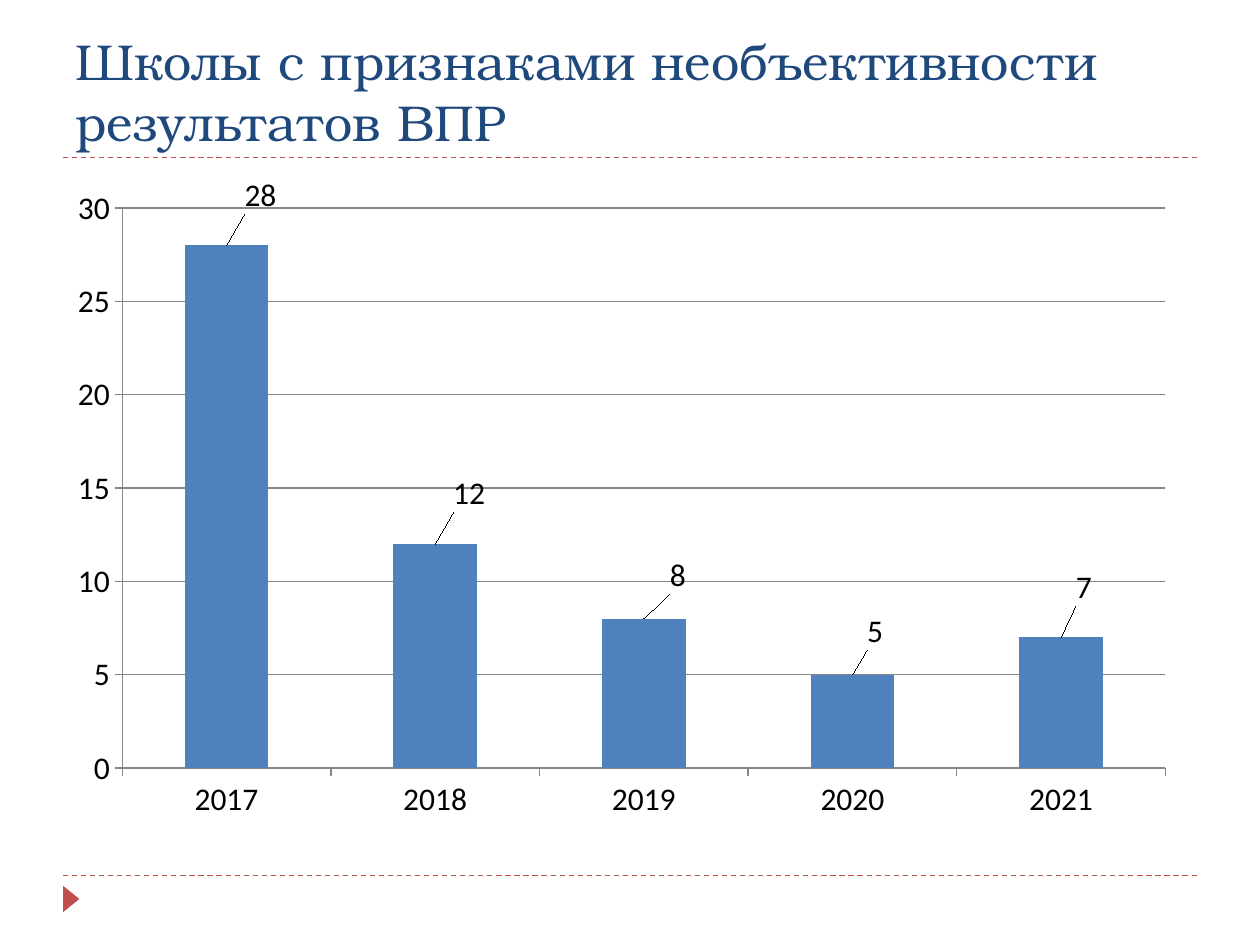
from dataclasses import dataclass

from lxml.etree import SubElement
from pptx import Presentation
from pptx.chart.data import CategoryChartData
from pptx.dml.color import RGBColor
from pptx.enum.chart import XL_CHART_TYPE, XL_LABEL_POSITION, XL_TICK_MARK
from pptx.enum.dml import MSO_LINE
from pptx.enum.shapes import MSO_CONNECTOR, MSO_SHAPE
from pptx.enum.text import MSO_ANCHOR, PP_ALIGN
from pptx.oxml.ns import qn
from pptx.util import Inches, Pt


@dataclass(frozen=True)
class Theme:
    title_color: RGBColor = RGBColor(0x1F, 0x49, 0x7D)
    accent: RGBColor = RGBColor(0xC0, 0x50, 0x4D)
    bar: RGBColor = RGBColor(0x4F, 0x81, 0xBD)
    grid: RGBColor = RGBColor(0x87, 0x87, 0x87)
    text: RGBColor = RGBColor(0, 0, 0)
    title_font: str = "TeX Gyre Bonum"
    chart_font: str = "Calibri"
    title_size: float = 28.8
    chart_size: float = 18
    line_width: float = 0.75


@dataclass(frozen=True)
class YearCount:
    year: str
    schools: int
    label_x: float
    label_y: float


THEME = Theme()
COUNTS = [
    YearCount("2017", 28, 0.03, -0.04),
    YearCount("2018", 12, 0.03, -0.04),
    YearCount("2019", 8, 0.03, -0.03),
    YearCount("2020", 5, 0.02, -0.03),
    YearCount("2021", 7, 0.02, -0.04),
]


def add_rule(page, top: float) -> None:
    rule = page.shapes.add_connector(
        MSO_CONNECTOR.STRAIGHT, Inches(0.5), Inches(top), Inches(9.5), Inches(top)
    )
    rule.line.color.rgb = THEME.accent
    rule.line.width = Pt(THEME.line_width)
    rule.line.dash_style = MSO_LINE.DASH
    SubElement(rule._element.spPr, qn("a:effectLst"))


def add_marker(page) -> None:
    marker = page.shapes.add_shape(
        MSO_SHAPE.ISOSCELES_TRIANGLE, Inches(0.46), Inches(7.07), Inches(0.21), Inches(0.13)
    )
    marker.rotation = 90
    marker.shadow.inherit = False
    marker.fill.solid()
    marker.fill.fore_color.rgb = THEME.accent
    marker.line.fill.background()


def add_title(page, text: str) -> None:
    box = page.shapes.add_textbox(Inches(0.5), Inches(0.25), Inches(9), Inches(1))
    frame = box.text_frame
    frame.word_wrap = True
    frame.vertical_anchor = MSO_ANCHOR.BOTTOM
    frame.text = text
    paragraph = frame.paragraphs[0]
    paragraph.alignment = PP_ALIGN.LEFT
    font = paragraph.runs[0].font
    font.name = THEME.title_font
    font.size = Pt(THEME.title_size)
    font.color.rgb = THEME.title_color


def set_layout(parent, index: int, **settings) -> None:
    for existing in parent.findall(qn("c:layout")):
        parent.remove(existing)
    layout = SubElement(parent, qn("c:layout"))
    parent.insert(index, layout)
    manual = SubElement(layout, qn("c:manualLayout"))
    for name, value in settings.items():
        SubElement(manual, qn(f"c:{name}")).set("val", str(value))


def style_axis(axis) -> None:
    axis.major_tick_mark = XL_TICK_MARK.OUTSIDE
    axis.minor_tick_mark = XL_TICK_MARK.NONE
    axis.format.line.color.rgb = THEME.grid
    axis.format.line.width = Pt(THEME.line_width)


def add_column_chart(page, counts: list[YearCount]) -> None:
    data = CategoryChartData()
    data.categories = [count.year for count in counts]
    data.add_series("Series 1", [count.schools for count in counts])
    chart = page.shapes.add_chart(
        XL_CHART_TYPE.COLUMN_CLUSTERED,
        Inches(0.43), Inches(1.39), Inches(9), Inches(5.23), data,
    ).chart
    chart.has_title = False
    chart.has_legend = False
    chart.font.name = THEME.chart_font
    chart.font.size = Pt(THEME.chart_size)
    chart.font.color.rgb = THEME.text

    style_axis(chart.category_axis)
    values = chart.value_axis
    style_axis(values)
    values.minimum_scale = 0
    values.maximum_scale = 30
    values.major_unit = 5
    values.has_major_gridlines = True
    values.major_gridlines.format.line.color.rgb = THEME.grid
    values.major_gridlines.format.line.width = Pt(THEME.line_width)

    plot = chart.plots[0]
    plot.gap_width = 150
    plot.vary_by_categories = False
    series = plot.series[0]
    series.format.fill.solid()
    series.format.fill.fore_color.rgb = THEME.bar
    series.data_labels.show_value = True
    for index in range(len(counts)):
        series.points[index].data_label.position = XL_LABEL_POSITION.OUTSIDE_END
    for label, count in zip(series._element.iter(qn("c:dLbl")), counts):
        set_layout(label, 1, x=count.label_x, y=count.label_y)

    plot_area = chart._chartSpace.find(f".//{qn('c:plotArea')}")
    set_layout(
        plot_area, 0, layoutTarget="inner", xMode="edge", yMode="edge",
        x=0.06, y=0.05, w=0.92, h=0.85,
    )


def main() -> None:
    deck = Presentation()
    deck.slide_width = Inches(10)
    deck.slide_height = Inches(7.5)
    page = deck.slides.add_slide(deck.slide_layouts[6])
    for top in (6.95, 1.25):
        add_rule(page, top)
    add_marker(page)
    add_title(page, "Школы с признаками необъективности результатов ВПР")
    add_column_chart(page, COUNTS)
    deck.save("out.pptx")


if __name__ == "__main__":
    main()
